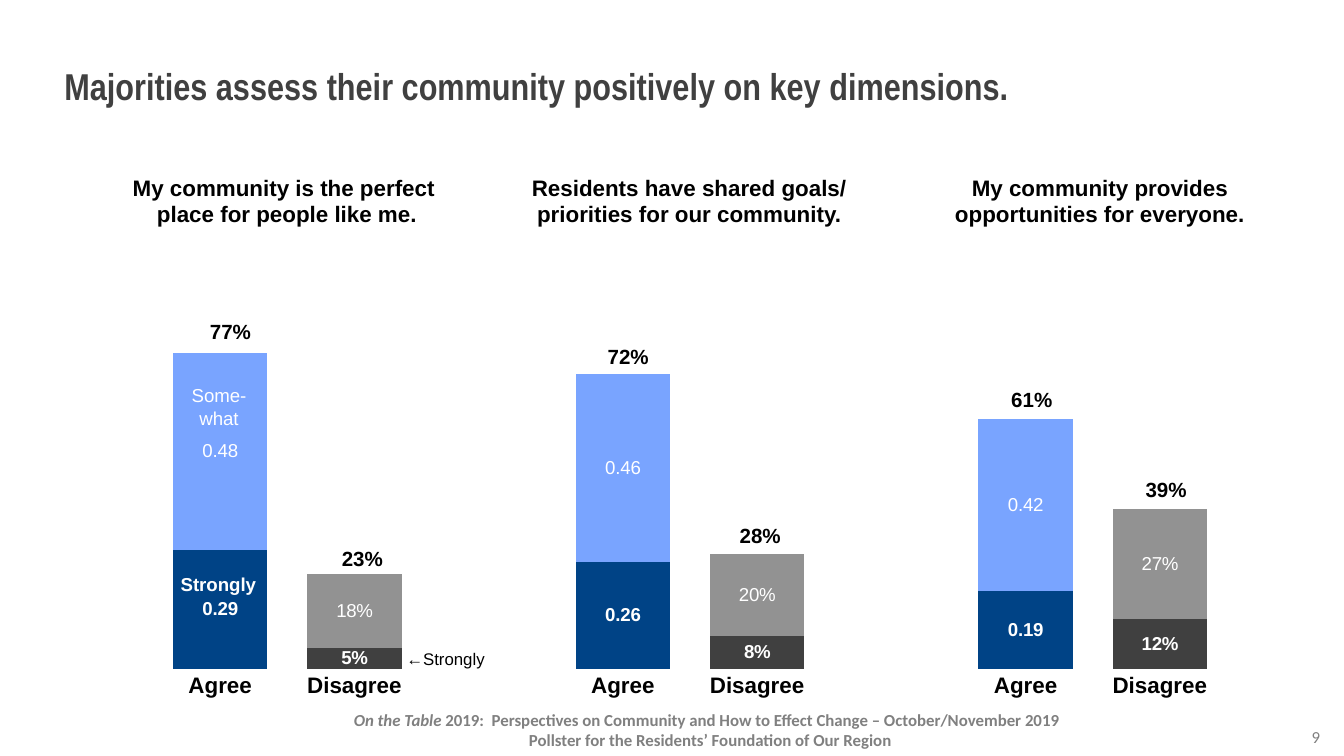
from lxml import etree
from pptx import Presentation
from pptx.chart.data import CategoryChartData
from pptx.dml.color import RGBColor
from pptx.enum.chart import XL_CHART_TYPE as ChartType, XL_TICK_MARK as TickMark
from pptx.enum.text import MSO_ANCHOR as Anchor, PP_ALIGN as Align
from pptx.oxml.ns import qn
from pptx.util import Pt

COLORS = {
    "black": "000000",
    "white": "FFFFFF",
    "title": "404040",
    "muted": "808080",
    "strongly agree": "004386",
    "somewhat agree": "79A4FF",
    "strongly disagree": "404040",
    "somewhat disagree": "929292",
}

# (left, width, question); "\v" is a line break
QUESTIONS = [
    (45.4, 216.7, "My community is the perfect \vplace for people like me."),
    (269.3, 200, "Residents have shared goals/ priorities for our community."),
    (504, 170.6, "My community provides opportunities for everyone."),
]
# (left, top, total)
TOTALS = [
    (105.1, 167.2, "77%"), (175.8, 288.9, "23%"),
    (318.2, 180.8, "72%"), (388.9, 276.5, "28%"),
    (534.4, 203.9, "61%"), (606.4, 252.2, "39%"),
]
# (answer, position within a question's group, values, bold, number format)
ANSWERS = [
    ("strongly agree", 0, [0.29, 0.26, 0.19], True, "General"),
    ("somewhat agree", 0, [0.48, 0.46, 0.42], False, "General"),
    ("strongly disagree", 1, [0.05, 0.08, 0.12], True, "0%"),
    ("somewhat disagree", 1, [0.18, 0.20, 0.27], False, "0%"),
]
CATEGORIES = ["Agree", "Disagree", "", "Agree", "Disagree", "", "Agree", "Disagree"]
PLOT_LAYOUT = {"x": 0.018, "y": 0.031, "w": 0.965, "h": 0.863}


def rgb(color):
    return RGBColor.from_string(COLORS[color])


def format_font(font, size, color="black", bold=False, name="Arial"):
    font.name = name
    font.size = Pt(size)
    font.bold = bold
    font.color.rgb = rgb(color)


def set_inner_layout(chart, fractions):
    """Fix the plot area, axes labels excluded, as fractions of the chart."""
    plot_area = chart.plots[0]._element.getparent()
    for old_layout in plot_area.findall(qn("c:layout")):
        plot_area.remove(old_layout)
    layout = etree.Element(qn("c:layout"))
    manual = etree.SubElement(layout, qn("c:manualLayout"))
    settings = {"layoutTarget": "inner", "xMode": "edge", "yMode": "edge", **fractions}
    for tag, value in settings.items():
        etree.SubElement(manual, qn(f"c:{tag}")).set("val", str(value))
    plot_area.insert(0, layout)


class SlideBuilder:
    def __init__(self, presentation):
        self.slide = presentation.slides.add_slide(presentation.slide_layouts[6])

    def text(self, left, top, width, height, text, size, color="black", bold=False,
             name="Arial", align=Align.CENTER, wrap=False, spacing=None, anchor=Anchor.TOP):
        box = self.slide.shapes.add_textbox(Pt(left), Pt(top), Pt(width), Pt(height))
        frame = box.text_frame
        frame.word_wrap = wrap
        frame.vertical_anchor = anchor
        frame.text = text
        for paragraph in frame.paragraphs:
            paragraph.alignment = align
            if spacing:
                paragraph.line_spacing = Pt(spacing)
            for run in paragraph.runs:
                format_font(run.font, size, color, bold, name)
        return frame

    def footer(self, left, top, width, height, italic_lead, rest):
        frame = self.text(left, top, width, height, italic_lead, 9, "muted", True, "Calibri")
        frame.paragraphs[0].runs[0].font.italic = True
        first_line, second_line = rest
        second = frame.add_paragraph()
        second.alignment = Align.CENTER
        for paragraph, line in ((frame.paragraphs[0], first_line), (second, second_line)):
            run = paragraph.add_run()
            run.text = line
            format_font(run.font, 9, "muted", True, "Calibri")

    def stacked_chart(self, left, top, width, height):
        data = CategoryChartData()
        data.categories = CATEGORIES
        for answer, position, shares, _, _ in ANSWERS:
            values = [None] * len(CATEGORIES)
            values[position::3] = shares
            data.add_series(answer.capitalize(), values)
        chart = self.slide.shapes.add_chart(
            ChartType.COLUMN_STACKED, Pt(left), Pt(top), Pt(width), Pt(height), data).chart
        chart.has_legend = False
        chart.has_title = False
        format_font(chart.font, 18)

        plot = chart.plots[0]
        plot.gap_width = 42
        plot.overlap = 100
        plot.vary_by_categories = False
        for series, (answer, _, _, bold, number_format) in zip(plot.series, ANSWERS):
            series.format.fill.solid()
            series.format.fill.fore_color.rgb = rgb(answer)
            labels = series.data_labels
            labels.show_value = True
            labels.number_format = number_format
            labels.number_format_is_linked = False
            format_font(labels.font, 10, "white", bold)

        axis = chart.category_axis
        axis.major_tick_mark = TickMark.NONE
        axis.format.line.fill.background()
        format_font(axis.tick_labels.font, 12, bold=True)
        axis = chart.value_axis
        axis.minimum_scale = 0
        axis.maximum_scale = 1
        axis.has_major_gridlines = False
        axis.visible = False
        set_inner_layout(chart, PLOT_LAYOUT)


def main():
    presentation = Presentation()
    presentation.slide_width = Pt(720)
    presentation.slide_height = Pt(405)
    builder = SlideBuilder(presentation)

    builder.footer(177.8, 376.6, 403.2, 28.8, "On the Table", (
        " 2019:  Perspectives on Community and How to Effect Change – October/November 2019 ",
        " Pollster for the Residents’ Foundation of Our Region"))
    builder.text(27.4, 12.2, 665.3, 67.7,
                 "Majorities assess their community positively on key dimensions.",
                 20, "title", True, "Arial Narrow", Align.LEFT, wrap=True, anchor=Anchor.MIDDLE)
    builder.stacked_chart(71.3, 131, 596.2, 254.2)
    builder.text(668.2, 385.9, 46.1, 18, "9", 9, "muted", name="Calibri",
                 align=Align.RIGHT, wrap=True)

    for left, width, question in QUESTIONS:
        builder.text(left, 90, width, 35.3, question, 12, bold=True, wrap=True, spacing=14)
    for left, top, total in TOTALS:
        builder.text(left, top, 36.7, 20.6, total, 11, bold=True)

    builder.text(210.2, 344.2, 56.9, 18, "←Strongly", 9)
    builder.text(94.3, 202.3, 46.1, 32.4, "Some-\vwhat", 10, "white")
    builder.text(89.3, 303.1, 55.4, 19.4, "Strongly", 10, "white", True)
    presentation.save("out.pptx")


if __name__ == "__main__":
    main()
